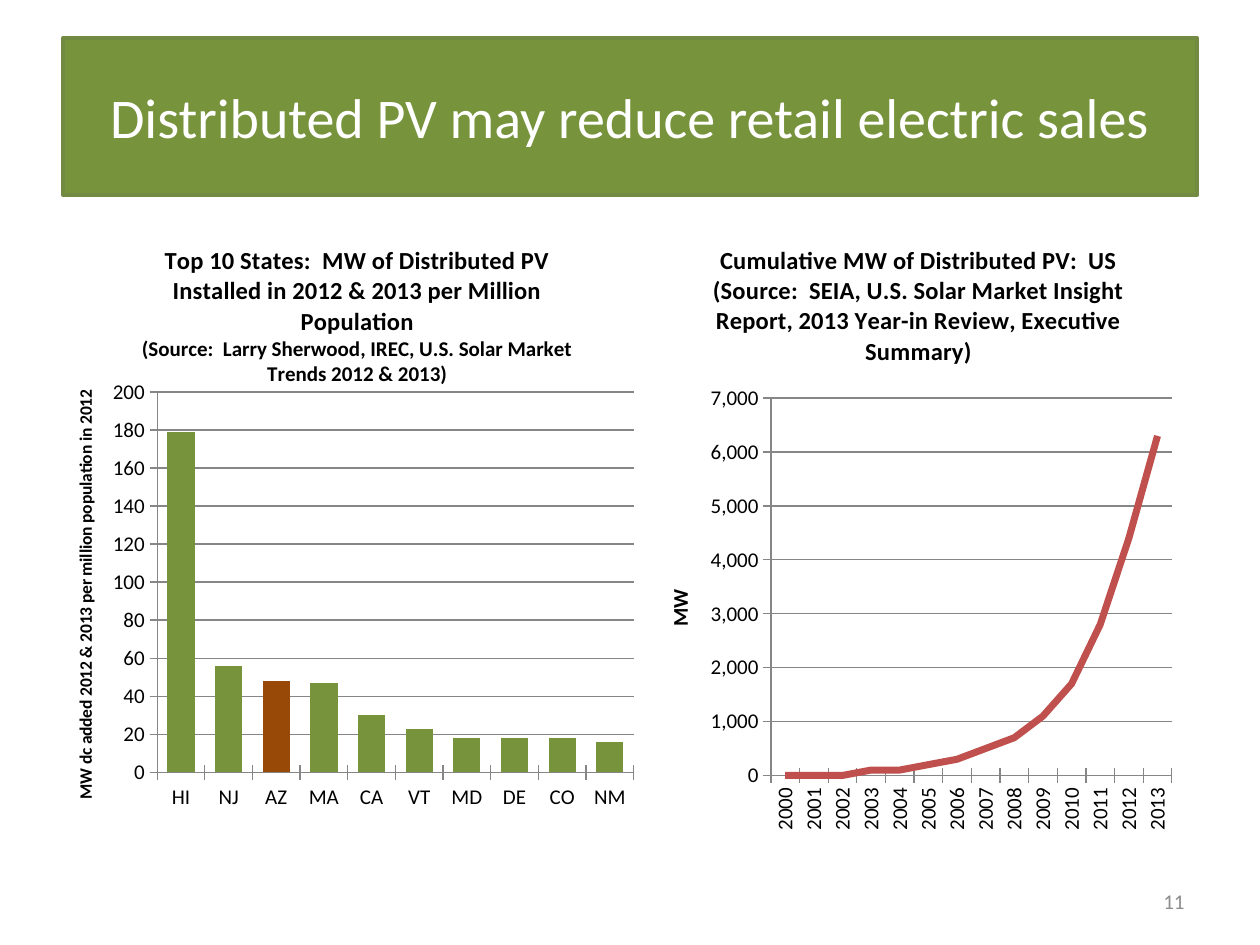
from pptx import Presentation
from pptx.chart.data import CategoryChartData
from pptx.dml.color import RGBColor
from pptx.enum.chart import XL_CHART_TYPE, XL_TICK_MARK
from pptx.enum.text import MSO_ANCHOR, PP_ALIGN
from pptx.oxml import parse_xml
from pptx.oxml.ns import nsdecls
from pptx.util import Inches, Pt

BAR, LINE = XL_CHART_TYPE.COLUMN_CLUSTERED, XL_CHART_TYPE.LINE
CROSS = XL_TICK_MARK.CROSS
MIDDLE = MSO_ANCHOR.MIDDLE
CENTER, RIGHT = PP_ALIGN.CENTER, PP_ALIGN.RIGHT

FACE = "Calibri"
GREEN, RUST, RED = "77933C", "984807", "C0504D"
BLACK, WHITE, GRAY, GRID = "000000", "FFFFFF", "8C8C8C", "868686"
EDGE = 0.5  # left and right margin
TOP, TALL = 1.75, 4.95  # band shared by both charts

STATES = ["HI", "NJ", "AZ", "MA", "CA", "VT", "MD", "DE", "CO", "NM"]
RATES = [179, 56, 48, 47, 30, 23, 18, 18, 18, 16]
YEARS = [str(year) for year in range(2000, 2014)]
TOTALS = [0, 0, 0, 100, 100, 200, 300, 500, 700, 1100, 1700, 2800, 4400, 6300]


def color(code):
    return RGBColor.from_string(code)


def style(font, size, code=BLACK, bold=False):
    font.name, font.size, font.bold = FACE, Pt(size), bold
    font.color.rgb = color(code)


def paint(fill, code):
    fill.solid()
    fill.fore_color.rgb = color(code)


def stroke(line, code, width):
    line.color.rgb = color(code)
    line.width = Pt(width)


def write(frame, lines):
    """Fill a chart or axis title with bold (text, size) lines."""
    for i, (text, size) in enumerate(lines):
        para = frame.paragraphs[0] if i == 0 else frame.add_paragraph()
        para.text = text
        style(para.font, size, bold=True)


def place(chart, box):
    """Fix the inner plot area as shares of the chart."""
    tags = "".join(f'<c:{tag} val="{val}"/>' for tag, val in zip("xywh", box))
    area = chart._chartSpace.chart.plotArea
    for old in area.findall(area.tag.replace("plotArea", "layout")):
        area.remove(old)
    area.insert(0, parse_xml(
        f'<c:layout {nsdecls("c")}><c:manualLayout><c:layoutTarget val="inner"/>'
        f'<c:xMode val="edge"/><c:yMode val="edge"/>{tags}'
        '</c:manualLayout></c:layout>'))


def add_title(slide, text):
    head = slide.shapes.title
    head.left, head.top = Inches(EDGE), Inches(0.3)
    head.width, head.height = Inches(10 - 2 * EDGE), Inches(1.25)
    paint(head.fill, GREEN)
    stroke(head.line, "738A42", 2)
    head.text_frame.text = text
    head.text_frame.vertical_anchor = MIDDLE
    para = head.text_frame.paragraphs[0]
    para.alignment = CENTER
    style(para.font, 32, WHITE)


def add_number(slide, text):
    box = slide.shapes.add_textbox(
        Inches(7.17), Inches(6.95), Inches(2.33), Inches(0.4))
    frame = box.text_frame
    frame.word_wrap = True
    frame.vertical_anchor = MIDDLE
    frame.text = text
    para = frame.paragraphs[0]
    para.alignment = RIGHT
    style(para.font, 12, GRAY)


def add_chart(slide, kind, left, width, cats, vals, title, unit, box, top, step):
    data = CategoryChartData()
    data.categories = cats
    data.add_series("Series 1", vals)
    chart = slide.shapes.add_chart(
        kind, Inches(left), Inches(TOP), Inches(width), Inches(TALL), data).chart
    style(chart.font, 10)
    chart.has_legend = False
    chart.has_title = True
    write(chart.chart_title.text_frame, title)
    chart.chart_title.include_in_layout = False
    place(chart, box)

    # Axes
    for axis in (chart.category_axis, chart.value_axis):
        axis.major_tick_mark = CROSS
        style(axis.tick_labels.font, 12)
        stroke(axis.format.line, GRID, 0.75)
    scale = chart.value_axis
    scale.minimum_scale, scale.maximum_scale, scale.major_unit = 0, top, step
    scale.has_major_gridlines = True
    stroke(scale.major_gridlines.format.line, GRID, 0.75)
    scale.has_title = True
    write(scale.axis_title.text_frame, [unit])
    chart.plots[0].vary_by_categories = False
    return chart


def add_bars(slide):
    title = [
        ("Top 10 States:  MW of Distributed PV Installed in 2012 & 2013 "
         "per Million Population", 14),
        ("(Source:  Larry Sherwood, IREC, U.S. Solar Market Trends "
         "2012 & 2013)", 12)]
    unit = ("MW dc added 2012 & 2013 per million population in 2012", 10)
    chart = add_chart(slide, BAR, EDGE, 4.67, STATES, RATES, title, unit,
                      (0.16, 0.275, 0.81, 0.61), 200, 20)
    plot = chart.plots[0]
    plot.gap_width = 75
    bars = plot.series[0]
    paint(bars.format.fill, GREEN)
    paint(bars.points[STATES.index("AZ")].format.fill, RUST)


def add_line(slide):
    title = [
        ("Cumulative MW of Distributed PV:  US", 14),
        ("(Source:  SEIA, U.S. Solar Market Insight Report, "
         "2013 Year-in Review, Executive Summary)", 14)]
    chart = add_chart(slide, LINE, 5.08, 4.42, YEARS, TOTALS, title, ("MW", 12),
                      (0.235, 0.285, 0.72, 0.605), 7000, 1000)
    labels = chart.value_axis.tick_labels
    labels.number_format = "#,##0"
    labels.number_format_is_linked = False
    curve = chart.plots[0].series[0]
    curve.smooth = False
    stroke(curve.format.line, RED, 4)

    # Upright years, with the line starting on the value axis
    years = chart.category_axis._element
    years.txPr.bodyPr.set("rot", "-5400000")
    years.txPr.bodyPr.set("vert", "horz")
    for cross in chart.value_axis._element.xpath("c:crossBetween"):
        cross.set("val", "midCat")


def main():
    deck = Presentation()
    deck.slide_width, deck.slide_height = Inches(10), Inches(7.5)
    slide = deck.slides.add_slide(deck.slide_layouts[5])
    add_title(slide, "Distributed PV may reduce retail electric sales")
    add_number(slide, "11")
    add_line(slide)
    add_bars(slide)
    deck.save("out.pptx")


if __name__ == "__main__":
    main()
